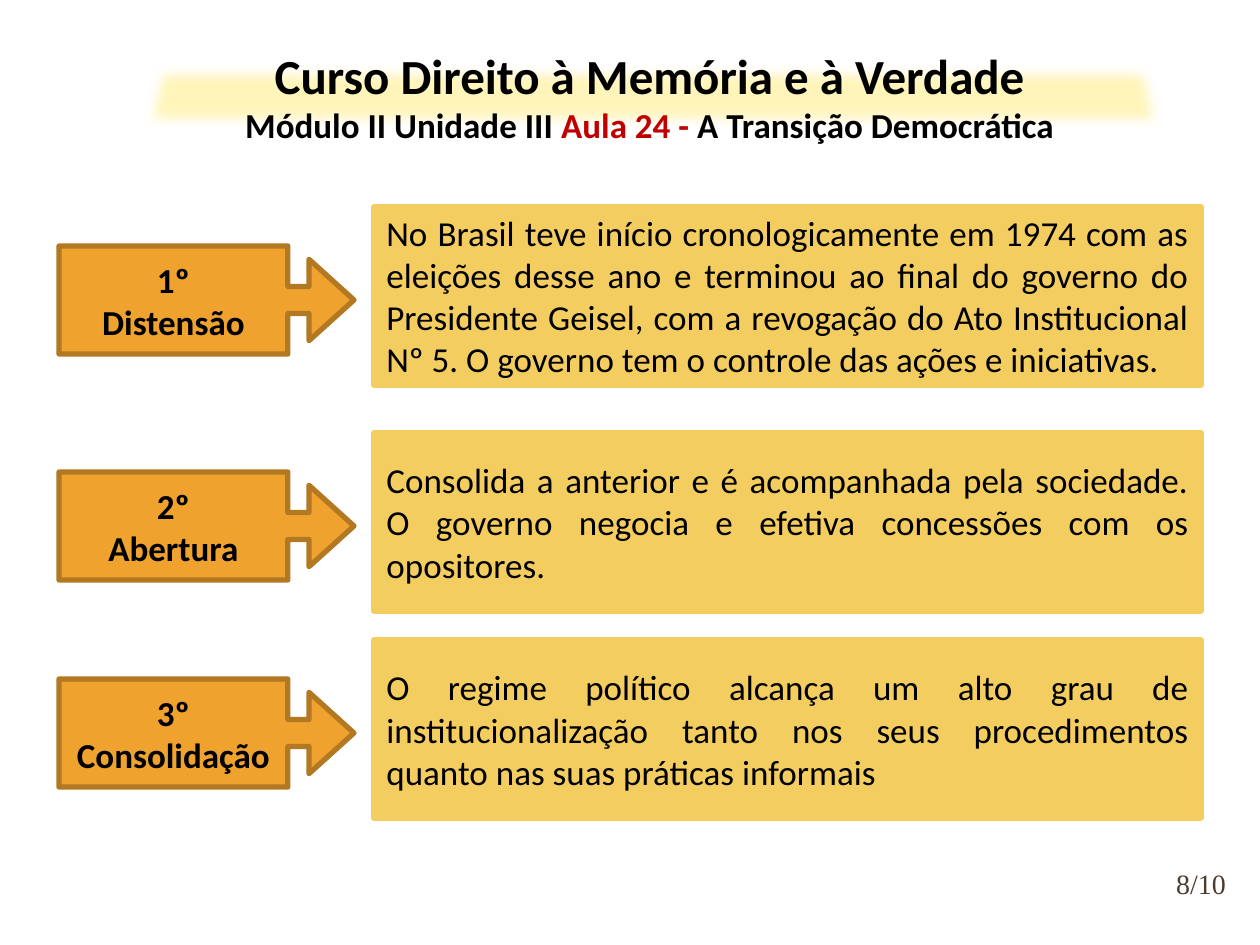
from dataclasses import dataclass

from lxml import etree
from pptx import Presentation
from pptx.dml.color import RGBColor
from pptx.enum.shapes import MSO_SHAPE
from pptx.enum.text import MSO_ANCHOR, PP_ALIGN
from pptx.oxml.ns import qn
from pptx.util import Emu, Pt

RECTANGLE = MSO_SHAPE.RECTANGLE
CALLOUT = MSO_SHAPE.RIGHT_ARROW_CALLOUT
TRAPEZOID = MSO_SHAPE.TRAPEZOID
TOP, MIDDLE = MSO_ANCHOR.TOP, MSO_ANCHOR.MIDDLE
CENTER, JUSTIFY = PP_ALIGN.CENTER, PP_ALIGN.JUSTIFY

PX_PER_INCH = 126
COLORS = {
    "black": "000000",
    "red": "C00000",
    "brown": "4E3B30",
    "sand": "F3CD60",
    "orange": "F0A22E",
    "orange_edge": "B27822",
    "glow": "FFF5BB",
}
CALLOUT_ADJUSTMENTS = (0.25, 0.377, 0.417, 0.776)


@dataclass(frozen=True)
class Area:
    left: int
    top: int
    width: int
    height: int


@dataclass(frozen=True)
class Stage:
    top: int
    ordinal: str
    name: str
    description: str


STAGES = (
    Stage(207, "1º", "Distensão",
          "No Brasil teve início cronologicamente em 1974 com as eleições desse ano "
          "e terminou ao final do governo do Presidente Geisel, com a revogação do "
          "Ato Institucional Nº 5. O governo tem o controle das ações e iniciativas."),
    Stage(433, "2º", "Abertura",
          "Consolida a anterior e é acompanhada pela sociedade. O governo negocia e "
          "efetiva concessões com os opositores."),
    Stage(640, "3º", "Consolidação",
          "O regime político alcança um alto grau de institucionalização tanto nos "
          "seus procedimentos quanto nas suas práticas informais"),
)


def px(length: int) -> Emu:
    return Emu(round(length * 914400 / PX_PER_INCH))


def color(name: str) -> RGBColor:
    return RGBColor.from_string(COLORS[name])


def bounds(area: Area) -> tuple:
    return px(area.left), px(area.top), px(area.width), px(area.height)


def add_filled(page, kind, area: Area, fill: str, edge: str = ""):
    shape = page.shapes.add_shape(kind, *bounds(area))
    shape.shadow.inherit = False
    shape.fill.solid()
    shape.fill.fore_color.rgb = color(fill)
    if edge:
        shape.line.color.rgb = color(edge)
        shape.line.width = Pt(3)
        etree.SubElement(shape.line._get_or_add_ln(), qn("a:round"))
    else:
        shape.line.fill.background()
    return shape


def prepare_text(box, anchor=MIDDLE):
    frame = box.text_frame
    frame.word_wrap = True
    frame.vertical_anchor = anchor
    return frame


def add_span(para, text: str, *, size: int = 20, font: str = "Calibri",
             ink: str = "black", bold: bool = False) -> None:
    span = para.add_run()
    span.text = text
    span.font.size = Pt(size)
    span.font.name = font
    span.font.bold = bold
    span.font.color.rgb = color(ink)


def add_stage(page, stage: Stage) -> None:
    box = add_filled(page, RECTANGLE, Area(374, stage.top, 827, 178), "sand", "sand")
    para = prepare_text(box).paragraphs[0]
    para.alignment = JUSTIFY
    add_span(para, stage.description)

    callout = add_filled(page, CALLOUT, Area(59, stage.top + 39, 295, 108),
                         "orange", "orange_edge")
    for index, value in enumerate(CALLOUT_ADJUSTMENTS):
        callout.adjustments[index] = value
    frame = prepare_text(callout)
    for para, text in ((frame.paragraphs[0], stage.ordinal),
                       (frame.add_paragraph(), stage.name)):
        para.alignment = CENTER
        add_span(para, text, bold=True)


def add_title(page) -> None:
    glow = add_filled(page, TRAPEZOID, Area(138, 66, 1027, 62), "glow")
    effects = glow._element.spPr.find(qn("a:effectLst"))
    etree.SubElement(effects, qn("a:softEdge"), rad=str(px(10)))

    box = page.shapes.add_textbox(*bounds(Area(128, 39, 1043, 115)))
    frame = prepare_text(box, TOP)
    heading, subtitle = frame.paragraphs[0], frame.add_paragraph()
    heading.alignment = subtitle.alignment = CENTER
    add_span(heading, "Curso Direito à Memória e à Verdade", size=28, bold=True)
    for text, ink in (("Módulo II Unidade III ", "black"),
                      ("Aula 24 - ", "red"),
                      ("A Transição Democrática", "black")):
        add_span(subtitle, text, ink=ink, bold=True)


def add_page_number(page) -> None:
    box = page.shapes.add_textbox(*bounds(Area(1159, 852, 84, 63)))
    frame = prepare_text(box)
    frame.margin_left = frame.margin_right = 0
    frame.margin_top = frame.margin_bottom = 0
    para = frame.paragraphs[0]
    para.alignment = CENTER
    add_span(para, "8/10", size=16, font="Times New Roman", ink="brown")


def main() -> None:
    deck = Presentation()
    deck.slide_width, deck.slide_height = px(1260), px(945)
    page = deck.slides.add_slide(deck.slide_layouts[6])
    add_page_number(page)
    for stage in STAGES:
        add_stage(page, stage)
    add_title(page)
    deck.save("out.pptx")


if __name__ == "__main__":
    main()
